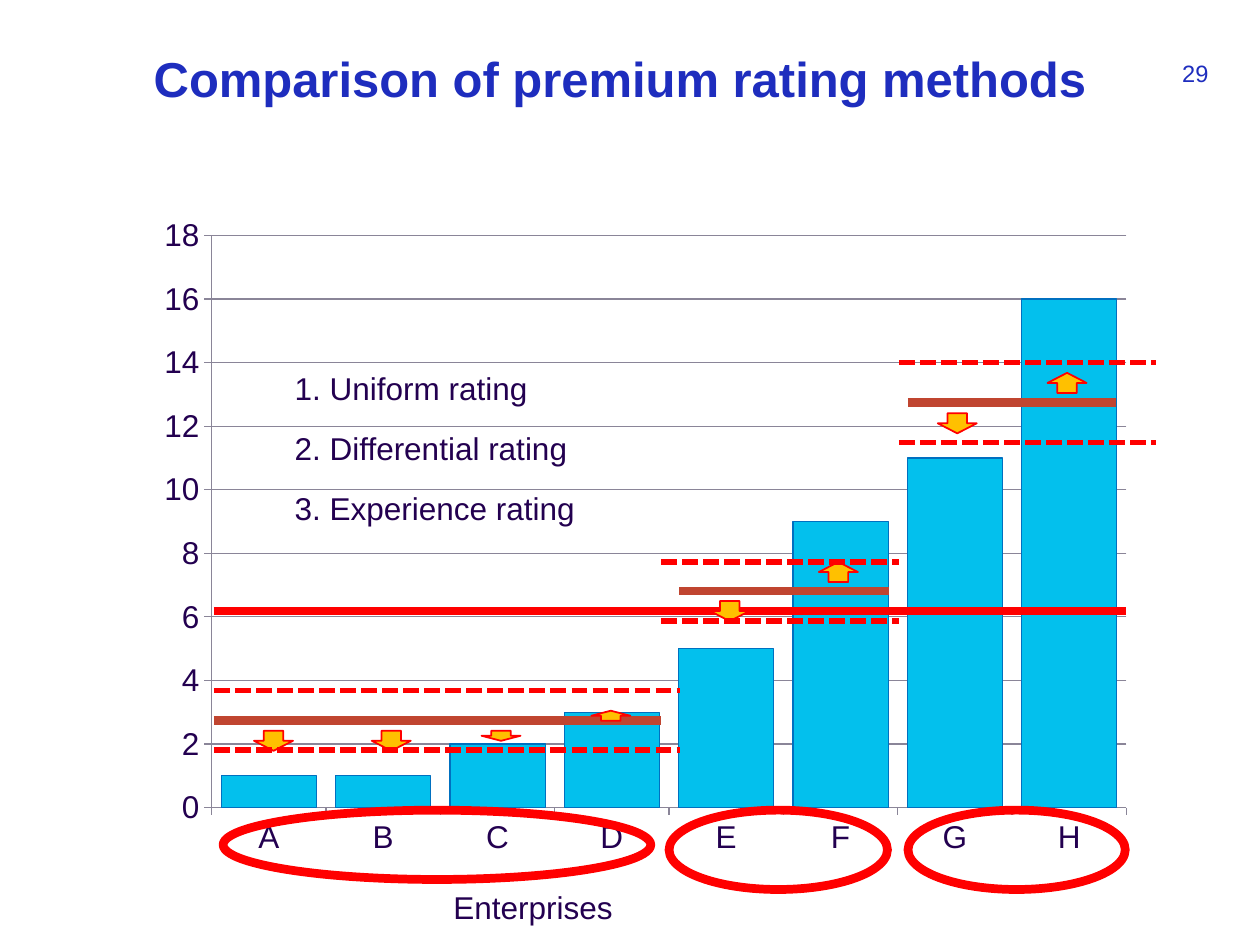
from typing import NamedTuple

import lxml.etree
import pptx
import pptx.chart.data
import pptx.dml.color
import pptx.enum.chart
import pptx.enum.dml
import pptx.enum.shapes
import pptx.enum.text
import pptx.oxml
import pptx.oxml.ns
import pptx.util

FONT = "Arial"
INK, BLUE, RED, BROWN, AMBER = "230050", "1E2DBE", "FF0000", "C04530", "FFC000"
ENTERPRISES = "ABCDEFGH"
RISKS = (1, 1, 2, 3, 5, 9, 11, 16)
TOP_VALUE = 18

# Chart frame and plot area in inches; the plot has one column per enterprise.
CHART_LEFT, CHART_TOP, CHART_WIDTH, CHART_HEIGHT = 1.14, 1.62, 7.95, 5.28
PLOT_LEFT, PLOT_TOP, PLOT_WIDTH, PLOT_HEIGHT = 1.68, 1.87, 7.26, 4.54
COLUMN = PLOT_WIDTH / len(ENTERPRISES)
ARROW_WIDTH, ARROW_HEIGHT = 0.31, 0.16

SHAPE = pptx.enum.shapes.MSO_SHAPE
UP, DOWN = SHAPE.UP_ARROW, SHAPE.DOWN_ARROW


class Level(NamedTuple):
    """A premium level from one plot column to another."""
    start: float
    end: float
    value: float


class Group(NamedTuple):
    start: float
    end: float
    height: float


class Adjustment(NamedTuple):
    kind: SHAPE
    column: float
    value: float
    height: float = ARROW_HEIGHT


UNIFORM = Level(0.02, 8, 6.19)
DIFFERENTIAL = (Level(0.02, 3.93, 2.74), Level(4.09, 5.92, 6.82), Level(6.09, 7.91, 12.74))
EXPERIENCE = (
    Level(6.01, 8.26, 11.5), Level(3.93, 6.01, 7.73), Level(3.93, 6.01, 5.87),
    Level(0.02, 4.1, 1.81), Level(0.02, 4.1, 3.68), Level(6.01, 8.26, 14),
)
GROUPS = (Group(6.09, 7.99, 0.63), Group(4, 5.91, 0.63), Group(0.1, 3.84, 0.55))
ADJUSTMENTS = (
    Adjustment(UP, 7.31, 13.68), Adjustment(UP, 5.31, 7.73),
    Adjustment(DOWN, 0.37, 2.42), Adjustment(DOWN, 4.36, 6.5),
    Adjustment(DOWN, 6.35, 12.41), Adjustment(DOWN, 1.4, 2.42),
    Adjustment(UP, 3.32, 3.05, ARROW_HEIGHT / 2),
    Adjustment(DOWN, 2.36, 2.42, ARROW_HEIGHT / 2),
)


def inches(*lengths: float) -> list[int]:
    return [pptx.util.Inches(length) for length in lengths]


def across(column: float) -> float:
    return PLOT_LEFT + column * COLUMN


def down(value: float) -> float:
    return PLOT_TOP + PLOT_HEIGHT * (1 - value / TOP_VALUE)


def rgb(color: str) -> pptx.dml.color.RGBColor:
    return pptx.dml.color.RGBColor.from_string(color)


def set_line(line, color: str, width: float) -> None:
    line.color.rgb = rgb(color)
    line.width = pptx.util.Pt(width)


def set_font(font, size: float, color: str, bold: bool = False) -> None:
    font.name = FONT
    font.size = pptx.util.Pt(size)
    font.bold = bold
    font.color.rgb = rgb(color)


def add_text(page, text: str, left: float, top: float, width: float, height: float, *,
             size: float = 18, color: str = INK, bold: bool = False,
             align=pptx.enum.text.PP_ALIGN.LEFT, inset: bool = True,
             spacing: float = 1.0) -> None:
    box = page.shapes.add_textbox(*inches(left, top, width, height))
    frame = box.text_frame
    frame.word_wrap = True
    if not inset:
        frame.margin_left = frame.margin_right = frame.margin_top = frame.margin_bottom = 0
    para = frame.paragraphs[0]
    para.alignment = align
    para.line_spacing = spacing
    span = para.add_run()
    span.text = text
    set_font(span.font, size, color, bold)


def fix_plot_area(chart) -> None:
    """Pin the inner plot area so that plot columns and values map to the slide."""
    shares = {
        "x": (PLOT_LEFT - CHART_LEFT) / CHART_WIDTH, "y": (PLOT_TOP - CHART_TOP) / CHART_HEIGHT,
        "w": PLOT_WIDTH / CHART_WIDTH, "h": PLOT_HEIGHT / CHART_HEIGHT,
    }
    settings = {"layoutTarget": "inner", "xMode": "edge", "yMode": "edge", **shares}
    name = pptx.oxml.ns.qn
    area = chart.plots[0]._element.getparent()
    for old in area.findall(name("c:layout")):
        area.remove(old)
    layout = lxml.etree.Element(name("c:layout"))
    manual = lxml.etree.SubElement(layout, name("c:manualLayout"))
    for tag, setting in settings.items():
        lxml.etree.SubElement(manual, name(f"c:{tag}")).set("val", str(setting))
    area.insert(0, layout)


def add_risk_chart(page) -> None:
    data = pptx.chart.data.CategoryChartData()
    data.categories = list(ENTERPRISES)
    data.add_series("Series 1", RISKS)
    chart = page.shapes.add_chart(
        pptx.enum.chart.XL_CHART_TYPE.COLUMN_CLUSTERED,
        *inches(CHART_LEFT, CHART_TOP, CHART_WIDTH, CHART_HEIGHT), data).chart
    chart.has_legend = chart.has_title = False
    set_font(chart.font, 18, INK)
    plot = chart.plots[0]
    plot.gap_width = 20
    plot.vary_by_categories = False
    bars = plot.series[0].format
    bars.fill.solid()
    bars.fill.fore_color.rgb = rgb("03C0ED")
    set_line(bars.line, "0070C0", 0.75)
    values = chart.value_axis
    values.minimum_scale, values.maximum_scale, values.major_unit = 0, TOP_VALUE, 2
    values.has_major_gridlines = True
    for axis in (chart.category_axis, values):
        axis.major_tick_mark = pptx.enum.chart.XL_TICK_MARK.OUTSIDE
    for ruled in (chart.category_axis, values, values.major_gridlines):
        set_line(ruled.format.line, "8A8598", 0.75)
    fix_plot_area(chart)


def add_level(page, level: Level, color: str, width: float, dashed: bool = False) -> None:
    height = down(level.value)
    line = page.shapes.add_connector(
        pptx.enum.shapes.MSO_CONNECTOR.STRAIGHT,
        *inches(across(level.start), height, across(level.end), height))
    set_line(line.line, color, width)
    if dashed:
        line.line.dash_style = pptx.enum.dml.MSO_LINE.SQUARE_DOT
    lxml.etree.SubElement(line._element.spPr, pptx.oxml.ns.qn("a:effectLst"))


def add_outlined(page, kind: SHAPE, left: float, top: float, width: float, height: float,
                 line_width: float, fill: str | None = None) -> None:
    shape = page.shapes.add_shape(kind, *inches(left, top, width, height))
    shape.shadow.inherit = False
    if fill:
        shape.fill.solid()
        shape.fill.fore_color.rgb = rgb(fill)
    else:
        shape.fill.background()
    set_line(shape.line, RED, line_width)


def main() -> None:
    deck = pptx.Presentation()
    deck.slide_width, deck.slide_height = inches(10, 7.5)
    page = deck.slides.add_slide(deck.slide_layouts[6])

    add_text(page, "Comparison of premium rating methods", 1.22, 0.44, 8.5, 0.88,
             size=28, color=BLUE, bold=True, inset=False, spacing=0.9)
    add_risk_chart(page)
    add_level(page, UNIFORM, RED, 5)
    for level in DIFFERENTIAL:
        add_level(page, level, BROWN, 5)
    for group in GROUPS:
        add_outlined(page, SHAPE.OVAL, across(group.start), 6.43,
                     (group.end - group.start) * COLUMN, group.height, 5)
    for row, method in enumerate(("Uniform", "Differential", "Experience")):
        add_text(page, f"{row + 1}. {method} rating", 2.24, 2.88 + row * 0.475, 3.54, 0.5)
    for arrow in ADJUSTMENTS:
        add_outlined(page, arrow.kind, across(arrow.column), down(arrow.value),
                     ARROW_WIDTH, arrow.height, 1, AMBER)
    add_text(page, "Enterprises", 3.5, 7, 3.23, 0.4)
    for level in EXPERIENCE:
        add_level(page, level, RED, 3, dashed=True)
    add_text(page, "29", 9.15, 0.47, 0.44, 0.31, size=13.5, color=BLUE,
             align=pptx.enum.text.PP_ALIGN.RIGHT, inset=False)
    deck.save("out.pptx")


if __name__ == "__main__":
    main()
